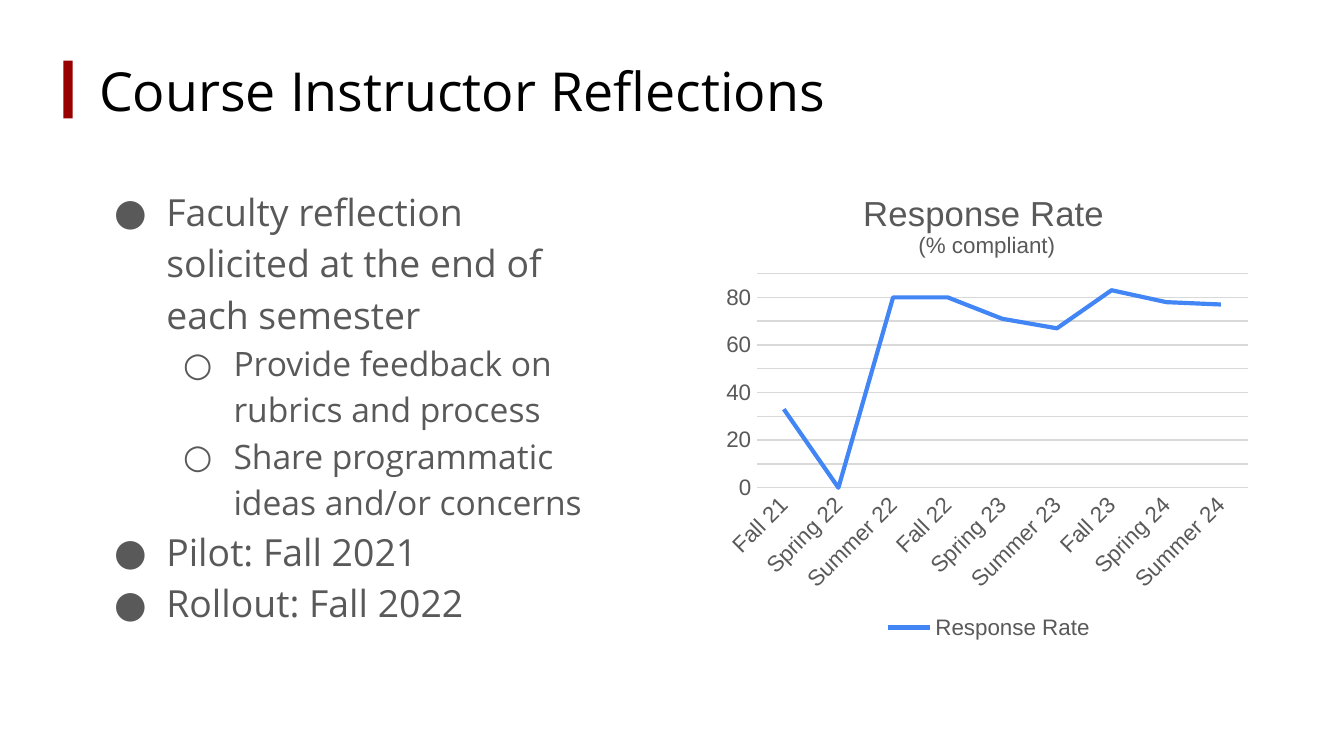
from copy import deepcopy

from lxml import etree
from pptx import Presentation
from pptx.chart.data import CategoryChartData
from pptx.dml.color import RGBColor
from pptx.enum.chart import XL_CHART_TYPE, XL_LEGEND_POSITION, XL_TICK_MARK
from pptx.enum.shapes import MSO_SHAPE
from pptx.enum.text import MSO_ANCHOR, PP_ALIGN
from pptx.oxml import parse_xml
from pptx.oxml.ns import nsdecls, qn
from pptx.util import Pt

LINE = XL_CHART_TYPE.LINE
BOTTOM = XL_LEGEND_POSITION.BOTTOM
NONE = XL_TICK_MARK.NONE
RECT = MSO_SHAPE.RECTANGLE
TOP, MIDDLE = MSO_ANCHOR.TOP, MSO_ANCHOR.MIDDLE
CENTER = PP_ALIGN.CENTER

SANS, ARIAL = "Open Sans", "Arial"
BLACK, GRAY, GRID, RED, BLUE = "000000", "595959", "D9D9D9", "990000", "4285F4"
LEVELS = [
    {"char": "●", "left": 36, "hang": 28, "size": 20},
    {"char": "○", "left": 72, "hang": 27, "size": 18},
]
POINTS = [
    (0, "Faculty reflection solicited at the end of each semester"),
    (1, "Provide feedback on rubrics and process"),
    (1, "Share programmatic ideas and/or concerns"),
    (0, "Pilot: Fall 2021"),
    (0, "Rollout: Fall 2022"),
]
RATES = {
    "Fall 21": 33, "Spring 22": 0, "Summer 22": 80,
    "Fall 22": 80, "Spring 23": 71, "Summer 23": 67,
    "Fall 23": 83, "Spring 24": 78, "Summer 24": 77,
}


def paint(color, code):
    """Set a colour from a hex string."""
    color.rgb = RGBColor.from_string(code)


def assign(target, values):
    """Set attributes from a dict of values."""
    for name, value in values.items():
        setattr(target, name, value)


def style(font, size, code, face):
    """Set the size, colour and face of a font."""
    assign(font, {"size": Pt(size), "name": face, "bold": False})
    paint(font.color, code)


def stroke(line, code, width):
    """Give a line its colour and width."""
    paint(line.color, code)
    line.width = Pt(width)


def frame(slide, box, anchor):
    """Add a wrapping text box and return its text frame."""
    text = slide.shapes.add_textbox(*map(Pt, box)).text_frame
    sides = ("left", "top", "right", "bottom")
    assign(text, {f"margin_{side}": Pt(7.2) for side in sides})
    assign(text, {"word_wrap": True, "vertical_anchor": anchor})
    return text


def bullet(para, level):
    """Give a paragraph the indent and bullet of its level."""
    props = para._p.get_or_add_pPr()
    props.set("marL", str(Pt(level["left"])))
    props.set("indent", str(-Pt(level["hang"])))
    tint = etree.SubElement(props, qn("a:buClr"))
    etree.SubElement(tint, qn("a:srgbClr"), val=GRAY)
    etree.SubElement(props, qn("a:buFont"), typeface=SANS)
    etree.SubElement(props, qn("a:buChar"), char=level["char"])


def header(slide, box):
    """Draw the red bar and the slide title."""
    left, top, width, height = box
    bar = slide.shapes.add_shape(RECT, Pt(left), Pt(top + 7), Pt(5), Pt(31))
    bar.shadow.inherit = False
    bar.fill.solid()
    paint(bar.fill.fore_color, RED)
    bar.line.fill.background()
    text = frame(slide, (left + 12, top, width - 12, height), MIDDLE)
    para = text.paragraphs[0]
    para.text = "Course Instructor Reflections"
    style(para.font, 28.8, BLACK, SANS)


def body(slide, box):
    """Write the bulleted list."""
    text = frame(slide, box, TOP)
    for index, (depth, words) in enumerate(POINTS):
        para = text.add_paragraph() if index else text.paragraphs[0]
        level = LEVELS[depth]
        bullet(para, level)
        assign(para, {"text": words, "level": depth, "line_spacing": 1.15})
        style(para.font, level["size"], GRAY, SANS)


def place(owner, index, parts, inner=False):
    """Give a chart part a manual layout in fractions of the chart."""
    for old in owner.findall(qn("c:layout")):
        owner.remove(old)
    layout = parse_xml(f"<c:layout {nsdecls('c')}><c:manualLayout/></c:layout>")
    if inner:
        etree.SubElement(layout[0], qn("c:layoutTarget"), val="inner")
    for side in "xy":
        etree.SubElement(layout[0], qn(f"c:{side}Mode"), val="edge")
    for name, value in parts.items():
        etree.SubElement(layout[0], qn(f"c:{name}"), val=str(value))
    owner.insert(index, layout)


def heading(chart):
    """Write the two-line chart title."""
    text = chart.chart_title.text_frame
    lines = [("Response Rate", 18.6), (" (% compliant)", 12)]
    for index, (words, size) in enumerate(lines):
        para = text.add_paragraph() if index else text.paragraphs[0]
        para.alignment = CENTER
        run = para.add_run()
        run.text = words
        style(run.font, size, GRAY, ARIAL)


def trend(slide, box):
    """Draw the line chart of response rates."""
    data = CategoryChartData(number_format="0")
    data.categories = list(RATES)
    data.add_series("Response Rate", list(RATES.values()))
    chart = slide.shapes.add_chart(LINE, *map(Pt, box), data).chart
    style(chart.font, 10, BLACK, ARIAL)
    heading(chart)
    chart.has_legend = True
    assign(chart.legend, {"position": BOTTOM, "include_in_layout": False})
    style(chart.legend.font, 12, GRAY, ARIAL)

    plot = chart.plots[0]
    plot.vary_by_categories = False
    series = plot.series[0]
    series.smooth = False
    stroke(series.format.line, BLUE, 2.25)

    cats, vals = chart.category_axis, chart.value_axis
    for axis in (cats, vals):
        assign(axis, {"major_tick_mark": NONE, "minor_tick_mark": NONE})
        style(axis.tick_labels.font, 12, GRAY, ARIAL)
    stroke(cats.format.line, GRID, 0.75)
    vals.format.line.fill.background()
    assign(vals, {
        "minimum_scale": 0, "maximum_scale": 90,
        "major_unit": 20, "minor_unit": 10,
        "has_major_gridlines": True, "has_minor_gridlines": True,
    })
    stroke(vals.major_gridlines.format.line, GRID, 0.75)

    root = chart.element
    look = root.xpath(".//c:valAx/c:majorGridlines/c:spPr")[0]
    root.xpath(".//c:valAx/c:minorGridlines")[0].append(deepcopy(look))
    root.xpath(".//c:catAx/c:txPr/a:bodyPr")[0].set("rot", "-2700000")
    place(root.xpath("./c:chart/c:title")[0], 1, {"x": 0.26, "y": 0.04})
    area = {"x": 0.07, "y": 0.22, "w": 0.91, "h": 0.45}
    place(root.xpath("./c:chart/c:plotArea")[0], 0, area, True)


def main():
    """Build and save the slide."""
    deck = Presentation()
    assign(deck, {"slide_width": Pt(720), "slide_height": Pt(405)})
    slide = deck.slides.add_slide(deck.slide_layouts[6])
    header(slide, (34, 25.5, 683, 45))
    body(slide, (46, 90.5, 289.5, 269))
    trend(slide, (385, 90.5, 289.5, 255))
    deck.save("out.pptx")


if __name__ == "__main__":
    main()
